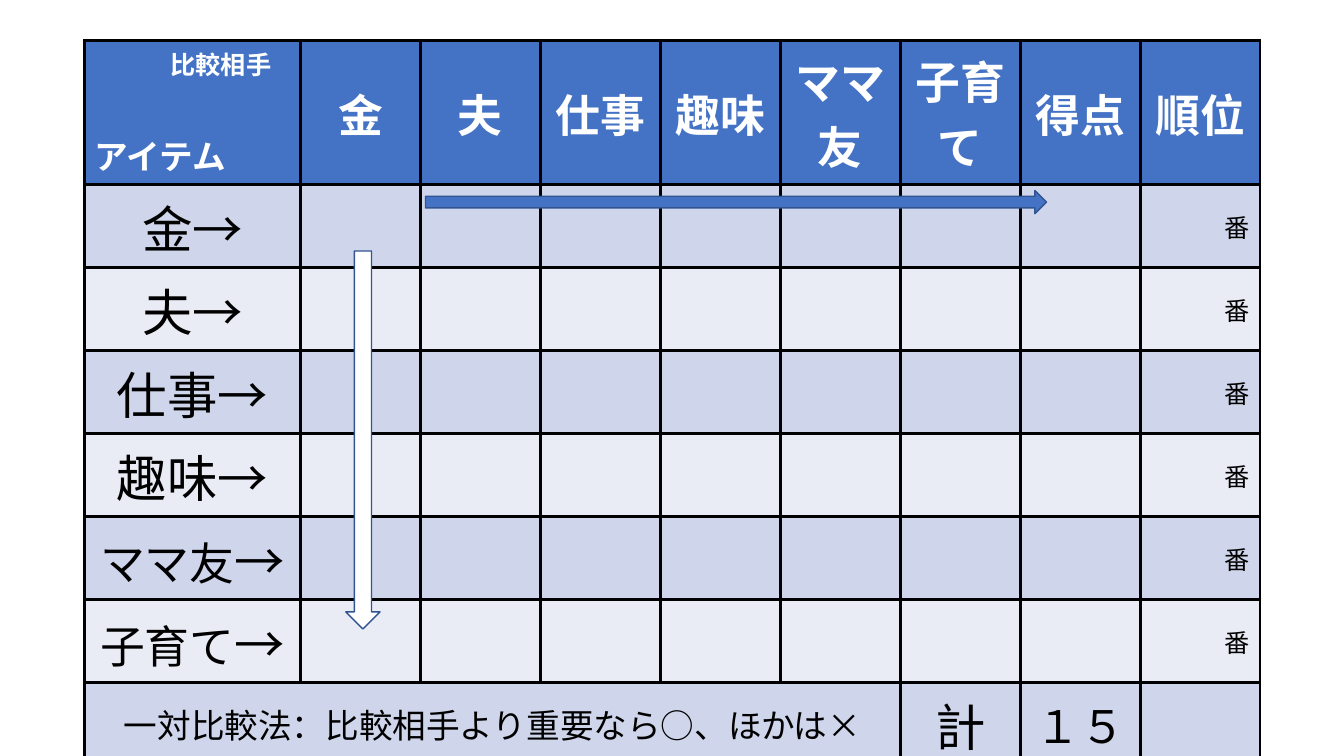
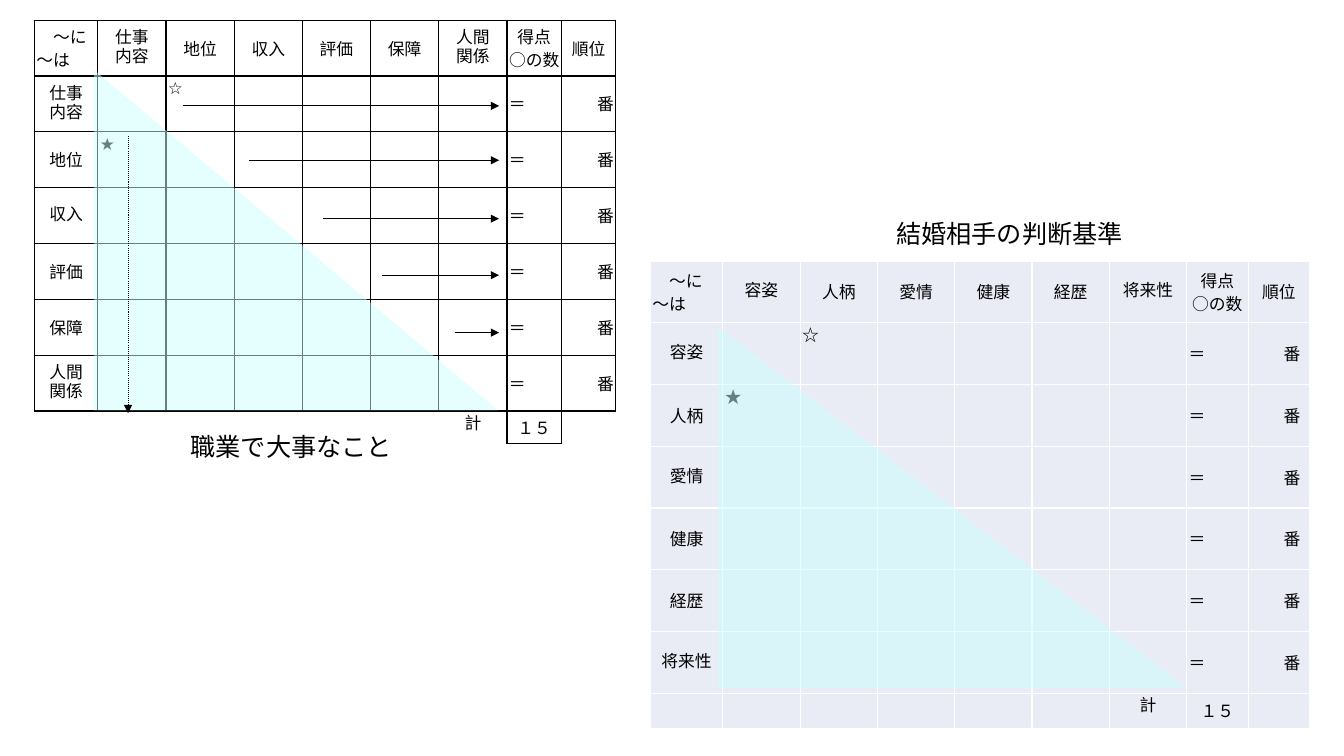
from dataclasses import dataclass
from typing import Optional, Sequence

from lxml.etree import SubElement
from pptx import Presentation
from pptx.dml.color import RGBColor
from pptx.enum.dml import MSO_LINE
from pptx.enum.shapes import MSO_CONNECTOR as Connector, MSO_SHAPE as Preset
from pptx.enum.text import MSO_ANCHOR as Anchor, MSO_AUTO_SIZE as AutoSize, PP_ALIGN as Align
from pptx.oxml.ns import qn
from pptx.util import Inches, Pt


# Shared look
@dataclass(frozen=True)
class Theme:
    black: str = "000000"
    white: str = "FFFFFF"
    blue: str = "4472C4"
    dark_blue: str = "325491"
    band_dark: str = "CFD5EA"
    band_light: str = "E9EBF5"
    aqua: str = "CCFFFF"
    sans: str = "Noto Sans CJK JP"
    serif: str = "TeX Gyre Schola"
    tiny: int = 12
    small: int = 18
    medium: int = 24
    large: int = 32
    huge: int = 36


THEME = Theme()
TIGHT = 0.95
EXACT = Pt(14)


@dataclass(frozen=True)
class Para:
    text: str
    size: int = THEME.tiny
    align: Align = Align.LEFT
    spacing: Optional[float] = None
    indent_chars: int = 0
    before: int = 0
    color: str = THEME.black
    bold: bool = False
    arrow: bool = False


@dataclass(frozen=True)
class Border:
    color: str
    width: float
    sides: str = "LRTB"


@dataclass(frozen=True)
class PairTable:
    left: float
    top: float
    width: float
    height: float
    label_width: float
    score_width: float
    total_height: float
    items: Sequence[str]
    font: str
    border: str
    fill: Optional[str] = None
    open_footer: bool = False


@dataclass(frozen=True)
class Arrow:
    x1: float
    y1: float
    x2: float
    y2: float
    dotted: bool = False


# Text and cells
def write(text_frame, paras: Sequence[Para], font: str) -> None:
    text_frame.text = "\n".join(para.text for para in paras)
    for paragraph, para in zip(text_frame.paragraphs, paras):
        paragraph.alignment = para.align
        if para.spacing:
            paragraph.line_spacing = para.spacing
        if para.before:
            paragraph.space_before = Pt(para.before)
        if para.indent_chars:
            properties = paragraph._p.get_or_add_pPr()
            properties.set("marL", str(Pt(para.indent_chars * para.size)))
            properties.set("indent", "0")
        if para.arrow:
            paragraph.add_run().text = "→"
        for span in paragraph.runs:
            span.font.size = Pt(THEME.huge if span.text == "→" else para.size)
            span.font.bold = para.bold
            span.font.color.rgb = RGBColor.from_string(para.color)
            span.font.name = font
            SubElement(span._r.get_or_add_rPr(), qn("a:ea"), typeface=THEME.sans)
        if not paragraph.runs:
            SubElement(paragraph._p, qn("a:endParaRPr"), sz=str(para.size * 100))


def style_cell(cell, border: Border, fill: Optional[str]) -> None:
    properties = cell._tc.get_or_add_tcPr()
    for side in "LRTB":
        line = SubElement(properties, qn(f"a:ln{side}"), w=str(Pt(border.width)))
        if side in border.sides:
            solid = SubElement(line, qn("a:solidFill"))
            SubElement(solid, qn("a:srgbClr"), val=border.color)
        else:
            SubElement(line, qn("a:noFill"))
    if fill:
        cell.fill.solid()
        cell.fill.fore_color.rgb = RGBColor.from_string(fill)
    else:
        cell.fill.background()


def add_grid(page, left: float, top: float, widths: Sequence[float], heights: Sequence[float]):
    table = page.shapes.add_table(len(heights), len(widths), Inches(left), Inches(top),
                                  Inches(sum(widths)), Inches(sum(heights))).table
    table.first_row = table.horz_banding = False
    for column, width in zip(table.columns, widths):
        column.width = Inches(width)
    for row, height in zip(table.rows, heights):
        row.height = Inches(height)
    return table


# Shapes
def add_block(page, preset, left: float, top: float, width: float, height: float,
              fill: str, line: Optional[str] = None, opacity: int = 100):
    shape = page.shapes.add_shape(preset, Inches(left), Inches(top), Inches(width), Inches(height))
    shape.shadow.inherit = False
    shape.fill.solid()
    shape.fill.fore_color.rgb = RGBColor.from_string(fill)
    if opacity < 100:
        color = shape.fill._xPr.find(f"{qn('a:solidFill')}/{qn('a:srgbClr')}")
        SubElement(color, qn("a:alpha"), val=str(opacity * 1000))
    if line:
        shape.line.color.rgb = RGBColor.from_string(line)
        shape.line.width = Pt(1)
    else:
        shape.line.fill.background()


def add_arrow(page, arrow: Arrow) -> None:
    connector = page.shapes.add_connector(Connector.STRAIGHT, Inches(arrow.x1), Inches(arrow.y1),
                                          Inches(arrow.x2), Inches(arrow.y2))
    connector.line.color.rgb = RGBColor.from_string(THEME.black)
    connector.line.width = Pt(0.75)
    if arrow.dotted:
        connector.line.dash_style = MSO_LINE.ROUND_DOT
    SubElement(connector.line._get_or_add_ln(), qn("a:tailEnd"), type="triangle")
    SubElement(connector._element.spPr, qn("a:effectLst"))


def add_caption(page, left: float, top: float, width: float, text: str) -> None:
    box = page.shapes.add_textbox(Inches(left), Inches(top), Inches(width), Inches(0.33))
    box.text_frame.word_wrap = False
    box.text_frame.auto_size = AutoSize.SHAPE_TO_FIT_TEXT
    write(box.text_frame, [Para(text, THEME.small, spacing=Pt(16))], THEME.serif)


# Large worked table
def build_worksheet(page) -> None:
    items = ["金", "夫", "仕事", "趣味", "ママ友", "子育て"]
    headings = items + ["得点", "順位"]
    last_row, last_column = len(items) + 1, len(headings)
    table = add_grid(page, 0.84, 0.4, [2.14] + [1.19] * len(headings), [0.79] * (last_row + 1))

    texts = {(0, 0): [
        Para("比較相手", THEME.small, indent_chars=3, color=THEME.white, bold=True),
        Para("アイテム", THEME.medium, before=35, color=THEME.white, bold=True)]}
    for column, heading in enumerate(headings, 1):
        texts[0, column] = [Para(heading, THEME.large, Align.CENTER, color=THEME.white, bold=True)]
    for row, item in enumerate(items, 1):
        size = THEME.large if len(item) > 2 else THEME.huge
        texts[row, 0] = [Para(item, size, Align.CENTER, arrow=True)]
        texts[row, last_column] = [Para("番", THEME.small, Align.RIGHT)]
    footer = {0: ("一対比較法：比較相手より重要なら○、ほかは×", THEME.medium),
              6: ("計", THEME.huge), 7: ("１５", THEME.large)}
    for column, (text, size) in footer.items():
        texts[last_row, column] = [Para(text, size, Align.CENTER)]

    for row in range(last_row + 1):
        band = THEME.band_dark if row % 2 else THEME.band_light
        for column in range(last_column + 1):
            cell = table.cell(row, column)
            cell.vertical_anchor = Anchor.TOP if row == column == 0 else Anchor.MIDDLE
            write(cell.text_frame, texts.get((row, column), [Para("")]), THEME.sans)
            style_cell(cell, Border(THEME.black, 2.25), band if row else THEME.blue)
    table.cell(last_row, 0).merge(table.cell(last_row, 5))

    add_block(page, Preset.RIGHT_ARROW, 4.22, 1.89, 6.16, 0.23, THEME.blue, THEME.dark_blue)
    add_block(page, Preset.DOWN_ARROW, 3.43, 2.49, 0.34, 3.75, THEME.white, THEME.dark_blue)


# Small pairwise tables
def pair_texts(items: Sequence[str]) -> dict:
    count = len(items)
    score, rank, total = count + 1, count + 2, count + 1

    def centred(text: str, spacing: float = TIGHT) -> list[Para]:
        return [Para(part, align=Align.CENTER, spacing=spacing) for part in text.split("\n")]

    def plain(text: str, indent_chars: int = 0) -> list[Para]:
        return [Para(text, spacing=TIGHT, indent_chars=indent_chars)]

    texts = {
        (0, 0): [Para("～に", align=Align.JUSTIFY, spacing=TIGHT, indent_chars=1),
                 Para("～は", align=Align.JUSTIFY, spacing=TIGHT)],
        (0, score): centred("得点\n○の数"),
        (0, rank): centred("順位"),
        (1, 2): plain("☆"),
        (2, 1): plain("★"),
        (total, count): centred("計"),
        (total, score): centred("１５"),
    }
    for number, item in enumerate(items, 1):
        texts[0, number] = centred(item, EXACT if number in (1, count) else TIGHT)
        texts[number, 0] = centred(item, EXACT if number in (1, 3, count) else TIGHT)
        texts[number, score] = plain("＝")
        texts[number, rank] = plain("番", 2)
    return texts


def add_pair_table(page, spec: PairTable) -> None:
    count = len(spec.items)
    score, total = count + 1, count + 1
    item_width = (spec.width - spec.label_width - 2 * spec.score_width) / count
    row_height = (spec.height - spec.total_height) / (count + 1)
    table = add_grid(page, spec.left, spec.top,
                     [spec.label_width] + [item_width] * count + [spec.score_width] * 2,
                     [row_height] * (count + 1) + [spec.total_height])
    texts = pair_texts(spec.items)
    top_aligned = {(1, 2), (2, 1), (total, count)}
    footer_sides = {count: "TR", score: "LRTB", score + 1: "LT"}
    for row in range(count + 2):
        for column in range(count + 3):
            cell = table.cell(row, column)
            cell.margin_left = cell.margin_right = Inches(0.02)
            cell.margin_top = cell.margin_bottom = 0
            cell.vertical_anchor = Anchor.TOP if (row, column) in top_aligned else Anchor.MIDDLE
            write(cell.text_frame, texts.get((row, column), [Para("")]), spec.font)
            is_open = spec.open_footer and row == total
            sides = footer_sides.get(column, "T") if is_open else "LRTB"
            style_cell(cell, Border(spec.border, 1, sides), spec.fill)


def build_examples(page) -> None:
    # Work priorities
    add_pair_table(page, PairTable(
        0.34, 0.2, 5.77, 4.2, 0.63, 0.54, 0.32,
        ["仕事\n内容", "地位", "収入", "評価", "保障", "人間\n関係"],
        THEME.serif, THEME.black, open_footer=True))
    add_block(page, Preset.RIGHT_TRIANGLE, 0.93, 0.69, 4.01, 3.38, THEME.aqua, opacity=50)
    starts = [(1.82, 1.05), (2.47, 1.59), (3.2, 2.17), (3.79, 2.73), (4.51, 3.3)]
    for x, y in starts:
        add_arrow(page, Arrow(x, y, 4.95, y))
    add_arrow(page, Arrow(1.27, 1.35, 1.27, 4.1, dotted=True))

    # Partner criteria
    add_pair_table(page, PairTable(
        6.45, 2.59, 6.54, 4.64, 0.72, 0.61, 0.35,
        ["容姿", "人柄", "愛情", "健康", "経歴", "将来性"],
        THEME.sans, THEME.white, fill=THEME.band_light))
    add_block(page, Preset.RIGHT_TRIANGLE, 7.12, 3.24, 4.66, 3.59, THEME.aqua, opacity=50)

    add_caption(page, 8.79, 2.19, 2.47, "結婚相手の判断基準")
    add_caption(page, 1.79, 4.31, 2.22, "職業で大事なこと")


def main() -> None:
    deck = Presentation()
    deck.slide_width, deck.slide_height = Inches(13.33), Inches(7.5)
    for build in (build_worksheet, build_examples):
        build(deck.slides.add_slide(deck.slide_layouts[6]))
    deck.save("out.pptx")


if __name__ == "__main__":
    main()
